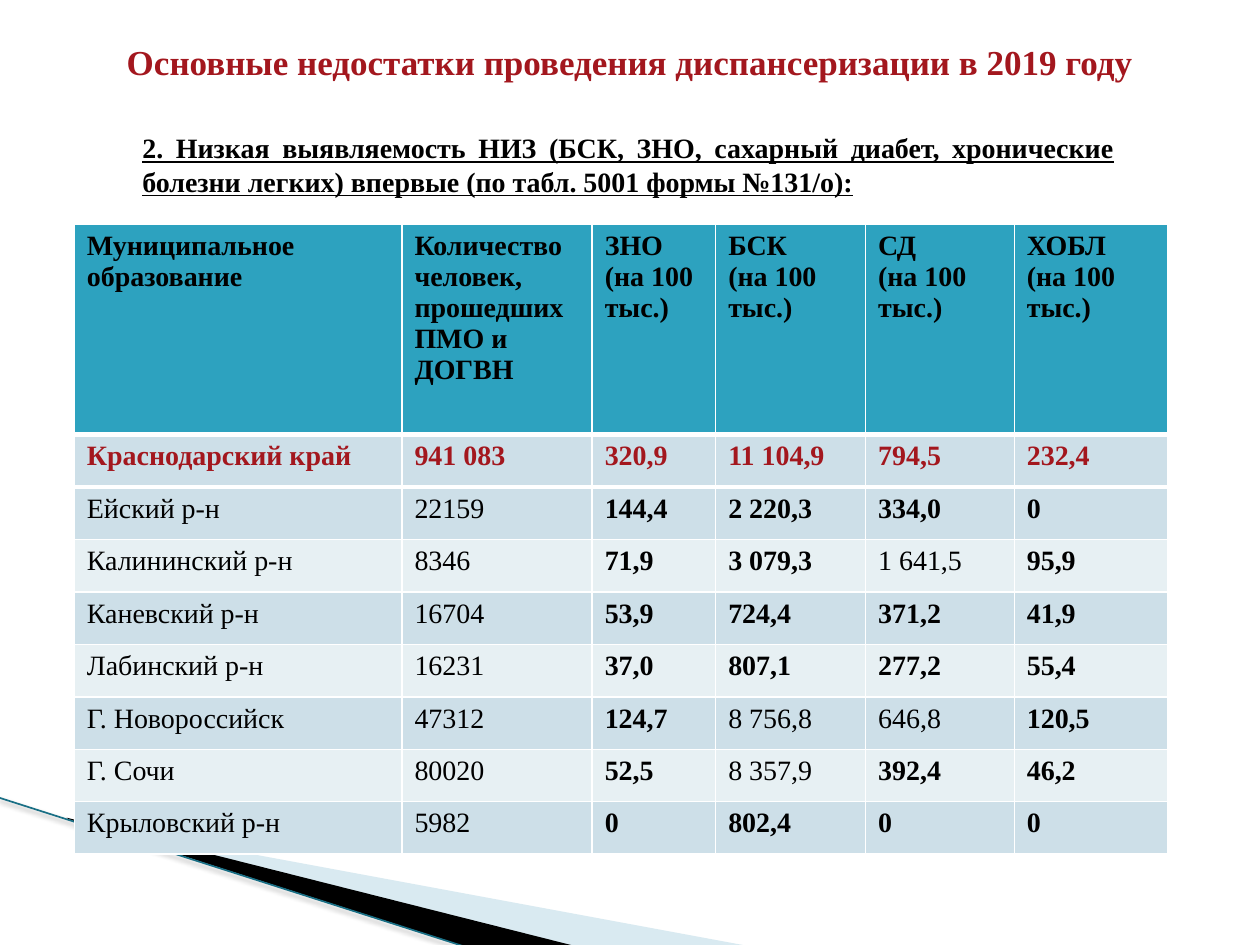
"""Build the slide on low detection of chronic diseases during the 2019 health checks."""
import pptx
import pptx.dml.color
import pptx.enum.shapes
import pptx.enum.text
import pptx.oxml
import pptx.util
from dataclasses import dataclass
from lxml import etree
from pptx.util import Inches

ALIGN = pptx.enum.text.PP_ALIGN
ANCHOR = pptx.enum.text.MSO_ANCHOR
NAMESPACE = "http://schemas.openxmlformats.org/drawingml/2006/main"


@dataclass(frozen=True)
class Theme:
    font: str = "Times New Roman"
    title_size: int = 20
    text_size: int = 16
    ink: str = "000000"
    accent: str = "A3171E"
    header: str = "2DA2BF"
    band: str = "CDDFE8"
    light_band: str = "E7F0F3"
    border: str = "FFFFFF"
    wedge: str = "A0CBDC"
    edge: str = "196F85"


theme = Theme()
color = pptx.dml.color.RGBColor.from_string


def write(frame, text, *, size=theme.text_size, ink=theme.ink, bold=True,
          underline=False, align=ALIGN.LEFT):
    frame.word_wrap = True
    frame.text = text
    for para in frame.paragraphs:
        para.alignment = align
        for span in para.runs:
            span.font.name = theme.font
            span.font.size = pptx.util.Pt(size)
            span.font.bold = bold
            span.font.underline = underline
            span.font.color.rgb = color(ink)


def add_border(cell, side, width):
    cell._tc.get_or_add_tcPr().append(pptx.oxml.parse_xml(
        f'<a:{side} xmlns:a="{NAMESPACE}" w="{pptx.util.Pt(width)}"><a:solidFill>'
        f'<a:srgbClr val="{theme.border}"/></a:solidFill></a:{side}>'))


deck = pptx.Presentation()
deck.slide_width, deck.slide_height = Inches(10), Inches(7.5)
page = deck.slides.add_slide(deck.slide_layouts[5])

wedges = [
    (theme.wedge, 40, [(0.55, 6.51), (5.95, 7.51), (4.56, 7.51), (0.55, 6.5)]),
    (theme.ink, 100, [(0.53, 6.49), (4.57, 7.51), (3.72, 7.52), (0.54, 6.5)]),
]
for fill, opacity, points in wedges:
    corners = [(Inches(x), Inches(y)) for x, y in points]
    outline = page.shapes.build_freeform(*corners[0], scale=1.0)
    outline.add_line_segments(corners[1:], close=True)
    wedge = outline.convert_to_shape()
    wedge.shadow.inherit = False
    wedge.line.fill.background()
    wedge.fill.solid()
    wedge.fill.fore_color.rgb = color(fill)
    if opacity < 100:
        tint = wedge._element.spPr.find(f".//{{{NAMESPACE}}}srgbClr")
        etree.SubElement(tint, f"{{{NAMESPACE}}}alpha", val=str(opacity * 1000))

edge = page.shapes.add_connector(
    pptx.enum.shapes.MSO_CONNECTOR.STRAIGHT,
    Inches(-0.01), Inches(6.33), Inches(3.71), Inches(7.52))
edge.line.color.rgb = color(theme.edge)
edge.line.width = pptx.util.Pt(0.95)
edge._element.spPr.append(pptx.oxml.parse_xml(
    f'<a:effectLst xmlns:a="{NAMESPACE}">'
    f'<a:outerShdw blurRad="{pptx.util.Pt(3.1)}" dist="{pptx.util.Pt(1.6)}" dir="5400000">'
    f'<a:srgbClr val="{theme.ink}"><a:alpha val="38000"/></a:srgbClr>'
    '</a:outerShdw></a:effectLst>'))

box = page.shapes.add_textbox(Inches(0.91), Inches(0.99), Inches(8.03), Inches(0.79))
write(box.text_frame,
      "2. Низкая выявляемость НИЗ (БСК, ЗНО, сахарный диабет, хронические болезни легких) "
      "впервые (по табл. 5001 формы №131/о):",
      underline=True, align=ALIGN.JUSTIFY)
box.text_frame.margin_left = Inches(0.22)

title = page.shapes.title
title.left, title.top, title.width, title.height = (
    Inches(0.5), Inches(0.05), Inches(9), Inches(0.87))
write(title.text_frame, "Основные недостатки проведения диспансеризации в 2019 году",
      size=theme.title_size, ink=theme.accent, align=ALIGN.CENTER)
title.text_frame.vertical_anchor = ANCHOR.MIDDLE
title.text_frame.auto_size = pptx.enum.text.MSO_AUTO_SIZE.NONE

rows = [
    ("Муниципальное образование", "Количество человек, прошедших ПМО и ДОГВН",
     "ЗНО (на 100 тыс.)", "БСК\n(на 100 тыс.)", "СД\n(на 100 тыс.)", "ХОБЛ\n(на 100 тыс.)"),
    ("Краснодарский край", "941 083", "320,9", "11 104,9", "794,5", "232,4"),
    ("Ейский р-н", "22159", "144,4", "2 220,3", "334,0", "0"),
    ("Калининский р-н", "8346", "71,9", "3 079,3", "1 641,5", "95,9"),
    ("Каневский р-н", "16704", "53,9", "724,4", "371,2", "41,9"),
    ("Лабинский р-н", "16231", "37,0", "807,1", "277,2", "55,4"),
    ("Г. Новороссийск", "47312", "124,7", "8 756,8", "646,8", "120,5"),
    ("Г. Сочи", "80020", "52,5", "8 357,9", "392,4", "46,2"),
    ("Крыловский р-н", "5982", "0", "802,4", "0", "0"),
]
plain_rates = {"1 641,5", "8 756,8", "646,8", "8 357,9"}
column_widths = [2.6, 1.51, 0.98, 1.19, 1.18, 1.22]
table_height, header_height = 5, 1.67
row_height = (table_height - header_height) / (len(rows) - 1)

table = page.shapes.add_table(
    len(rows), len(column_widths), Inches(0.59), Inches(1.78),
    Inches(sum(column_widths)), Inches(table_height)).table
for column, width in zip(table.columns, column_widths):
    column.width = Inches(width)

for row_index, values in enumerate(rows):
    table.rows[row_index].height = Inches(row_height if row_index else header_height)
    if row_index == 0:
        fill = theme.header
    elif row_index > 1 and row_index % 2:
        fill = theme.light_band
    else:
        fill = theme.band
    widths = {"lnL": 0.96, "lnR": 0.96,
              "lnT": 3 if row_index in (1, 2) else 0.96,
              "lnB": 3 if row_index in (0, 1) else 0.96}
    for column_index, value in enumerate(values):
        cell = table.cell(row_index, column_index)
        write(cell.text_frame, value,
              ink=theme.accent if row_index == 1 else theme.ink,
              bold=row_index < 2 or (column_index > 1 and value not in plain_rates))
        for side, width in widths.items():
            add_border(cell, side, width)
        cell.fill.solid()
        cell.fill.fore_color.rgb = color(fill)

deck.save("out.pptx")
